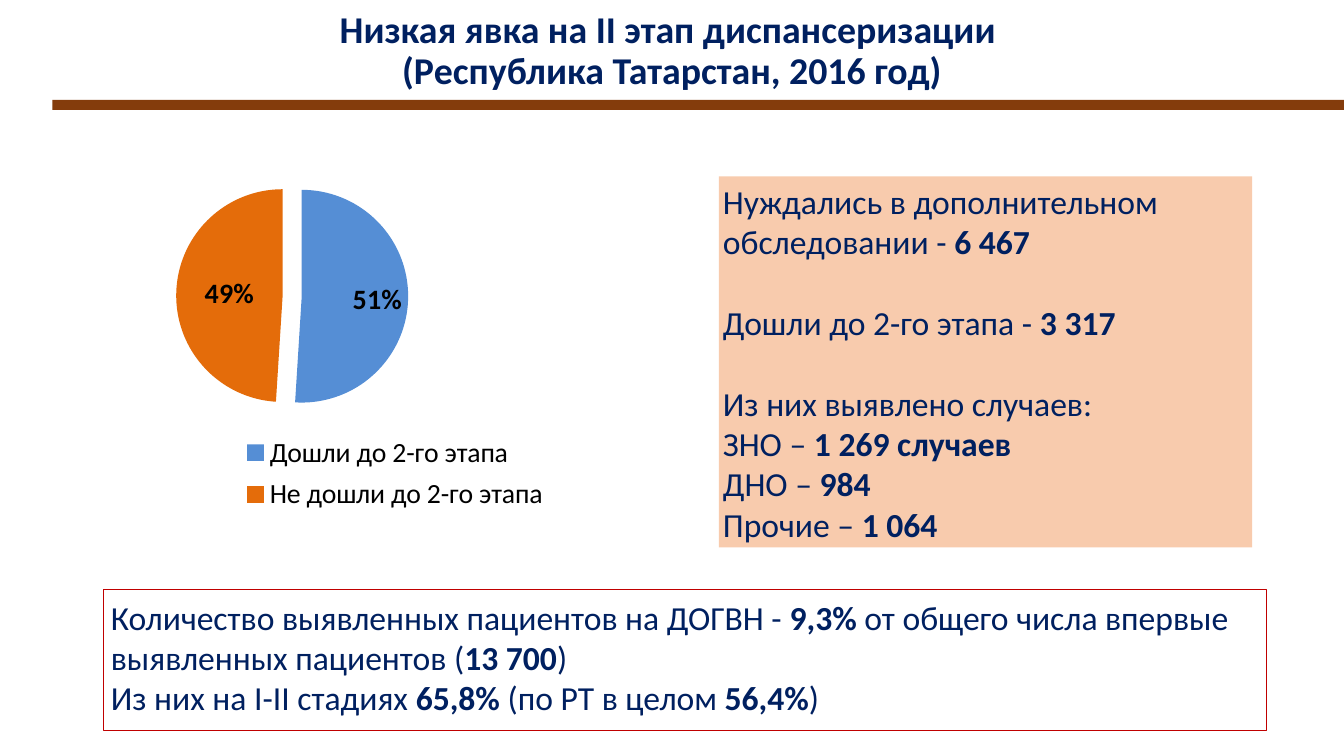
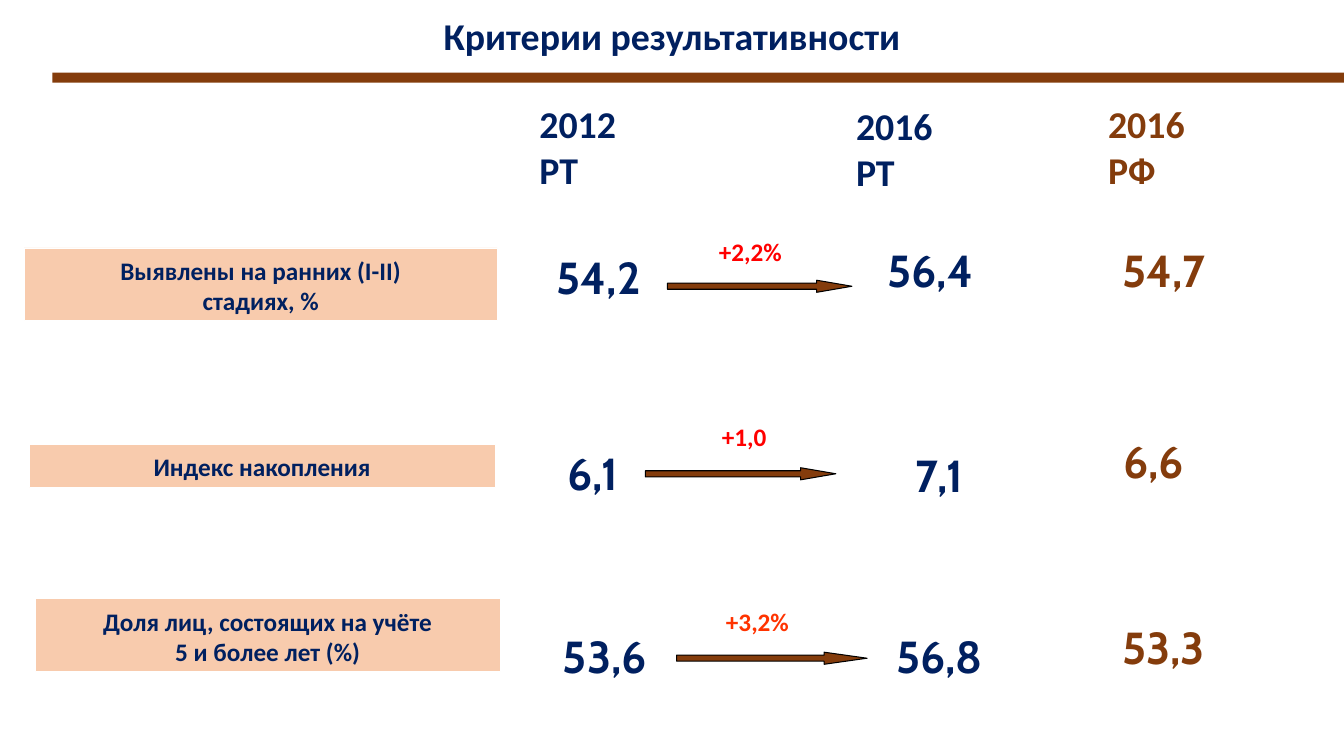
from lxml import etree
from pptx import Presentation
from pptx.chart.data import CategoryChartData
from pptx.dml.color import RGBColor
from pptx.enum.chart import XL_CHART_TYPE as ChartType
from pptx.enum.chart import XL_LABEL_POSITION as LabelPos
from pptx.enum.chart import XL_LEGEND_POSITION as LegendPos
from pptx.enum.shapes import MSO_SHAPE as Shape
from pptx.enum.text import MSO_ANCHOR as Anchor
from pptx.enum.text import PP_ALIGN as Align
from pptx.oxml.ns import qn
from pptx.util import Inches, Pt

COLORS = {
    "navy": "002060", "brown": "843C0C", "peach": "F8CBAD", "crimson": "C00000",
    "red": "FF0000", "scarlet": "FF3300", "blue": "558ED5", "orange": "E46C0A",
    "white": "FFFFFF", "black": "000000",
}
BODY, FIGURES = "Calibri", "Cabin"
TITLE_SIZE, INSET = 27, 0.07
BAND_LEFT, BAND_HEIGHT = 0.52, 0.1

# Slide 1 content: each paragraph is (space before, [(text, bold), ...])
TURNOUT_TITLE = ["Низкая явка на II этап диспансеризации ", "(Республика Татарстан, 2016 год)"]
TURNOUT = [("Дошли до 2-го этапа", 51, "blue"), ("Не дошли до 2-го этапа", 49, "orange")]
GAP = 29
EXAMINED = [
    (0, [("Нуждались в дополнительном обследовании - ", False), ("6 467", True)]),
    (GAP, [("Дошли до 2-го этапа - ", False), ("3 317", True)]),
    (GAP, [("Из них выявлено случаев:", False)]),
    (0, [("ЗНО – ", False), ("1 269 случаев", True)]),
    (0, [("ДНО – ", False), ("984", True)]),
    (0, [("Прочие – ", False), ("1 064", True)]),
]
DETECTED = [
    (0, [("Количество выявленных пациентов на ДОГВН - ", False), ("9,3% ", True),
         ("от общего числа впервые выявленных пациентов (", False),
         ("13 700", True), (")", False)]),
    (0, [("Из них на I-II стадиях ", False), ("65,8%", True),
         (" (по РТ в целом ", False), ("56,4%", True), (")", False)]),
]

# Slide 2 content
CRITERIA_TITLE = "Критерии результативности"
HEADINGS = [  # year, region, colour, left, top
    ("2012", "РТ", "navy", 5.28, 0.93),
    ("2016", "РТ", "navy", 8.42, 0.95),
    ("2016", "РФ", "brown", 10.92, 0.93),
]
CRITERIA = [
    {"label": ["Выявлены на ранних (I-II)", "стадиях, %"], "label_at": (0.24, 2.46, 4.69, 0.72),
     "figures": [("54,2", 5.94, 2.41), ("56,4", 9.23, 2.34), ("54,7", 11.06, 2.34)],
     "change": ("+2,2%", "red", 7.06, 2.27), "arrow": (6.62, 2.78, 1.83, 2.91)},
    {"label": ["Индекс накопления"], "label_at": (0.29, 4.41, 4.62, 0.43),
     "figures": [("6,1", 5.88, 4.35), ("7,1", 9.32, 4.37), ("6,6", 11.07, 4.23)],
     "change": ("+1,0", "red", 7.09, 4.11), "arrow": (6.4, 4.64, 1.89, 2.91)},
    {"label": ["Доля лиц, состоящих на учёте", "5 и более лет (%)"],
     "label_at": (0.35, 5.94, 4.61, 0.72),
     "figures": [("53,6", 6, 6.17), ("56,8", 9.32, 6.17), ("53,3", 11.06, 6.08)],
     "change": ("+3,2%", "scarlet", 7.13, 5.94), "arrow": (6.71, 6.47, 1.89, 3.55)},
]
FIGURE_WIDTH, FIGURE_HEIGHT = 1.14, 0.67


def rgb(name):
    return RGBColor.from_string(COLORS[name])


def style(font, size, color, bold=False, face=BODY):
    font.name, font.size, font.bold = face, Pt(size), bold
    font.color.rgb = rgb(color)


def inches(box):
    return [Inches(length) for length in box]


def add_block(slide, box, fill=None, line=None, width=0.75, kind=Shape.RECTANGLE):
    block = slide.shapes.add_shape(kind, *inches(box))
    block.shadow.inherit = False
    if fill:
        block.fill.solid()
        block.fill.fore_color.rgb = rgb(fill)
    else:
        block.fill.background()
    if line:
        block.line.color.rgb = rgb(line)
        block.line.width = Pt(width)
    else:
        block.line.fill.background()
    return block


def write(holder, paragraphs, size, color, face=BODY, align=Align.LEFT,
          inset=INSET, anchor=Anchor.TOP):
    frame = holder.text_frame
    frame.word_wrap = True
    frame.vertical_anchor = anchor
    frame.margin_left = frame.margin_right = Inches(inset)
    frame.margin_top = frame.margin_bottom = Inches(inset)
    for i, (before, runs) in enumerate(paragraphs):
        paragraph = frame.add_paragraph() if i else frame.paragraphs[0]
        paragraph.alignment = align
        if before:
            paragraph.space_before = Pt(before)
        for text, bold in runs:
            run = paragraph.add_run()
            run.text = text
            style(run.font, size, color, bold, face)


def write_bold(slide, box, lines, size, color, **options):
    holder = slide.shapes.add_textbox(*inches(box))
    write(holder, bold_lines(lines), size, color, **options)
    return holder


def bold_lines(lines):
    return [(0, [(line, True)]) for line in lines]


def add_title(slide, box, lines, band_top, **options):
    title = write_bold(slide, box, lines, TITLE_SIZE, "navy", align=Align.CENTER,
                       anchor=Anchor.MIDDLE, **options)
    add_block(slide, (BAND_LEFT, band_top, 13.33 - BAND_LEFT, BAND_HEIGHT), "brown")
    return title


def set_layout(parent, index, x, y, w, h, inner=False):
    for old in parent.findall(qn("c:layout")):
        parent.remove(old)
    layout = etree.Element(qn("c:layout"))
    manual = etree.SubElement(layout, qn("c:manualLayout"))
    settings = [("layoutTarget", "inner")] if inner else []
    settings += [("xMode", "edge"), ("yMode", "edge"), ("x", x), ("y", y), ("w", w), ("h", h)]
    for tag, value in settings:
        etree.SubElement(manual, qn("c:" + tag)).set("val", str(value))
    parent.insert(index, layout)


def add_turnout_pie(slide):
    data = CategoryChartData()
    data.categories = [name for name, _, _ in TURNOUT]
    data.add_series("Явка", [share for _, share, _ in TURNOUT])
    chart = slide.shapes.add_chart(ChartType.PIE, *inches((0.43, 1.55, 5.05, 3.64)), data).chart
    chart.has_title = False
    style(chart.font, 10, "black")
    plot = chart.plots[0]
    plot.vary_by_categories = True
    plot_area = plot._element.getparent()
    set_layout(plot_area, 0, 0.03, 0.09, 0.88, 0.58, inner=True)

    # Slices and the pulled-out first one
    series = plot.series[0]
    for i, (_, _, color) in enumerate(TURNOUT):
        slice_fill = series.points[i].format.fill
        slice_fill.solid()
        slice_fill.fore_color.rgb = rgb(color)
    first = series._element.find(qn("c:dPt"))
    explosion = etree.Element(qn("c:explosion"))
    explosion.set("val", "18")
    first.find(qn("c:spPr")).addprevious(explosion)

    # Percent labels
    labels = series.data_labels
    labels.show_percentage, labels.show_value = True, False
    labels.number_format, labels.number_format_is_linked = "0%", False
    labels.position = LabelPos.INSIDE_END
    style(labels.font, 20, "black", True)
    second = series.points[1].data_label
    style(second.font, 20, "black", True)
    second.position = LabelPos.CENTER
    for tag, shown in (("showVal", "0"), ("showCatName", "0"), ("showSerName", "0"),
                       ("showLegendKey", "0"), ("showPercent", "1")):
        for flag in second._dLbl.findall(qn("c:" + tag)):
            flag.set("val", shown)

    # Legend
    chart.has_legend = True
    legend = chart.legend
    legend.position = LegendPos.BOTTOM
    legend.include_in_layout = True
    style(legend.font, 19.8, "black")
    set_layout(legend._element, 1, 0.38, 0.74, 0.62, 0.25)


def build_turnout(slide):
    title = add_title(slide, (0, 0.03, 13.33, 0.96), TURNOUT_TITLE[:1], 0.99, inset=0.05)
    heading = title.text_frame.paragraphs[0]
    heading.line_spacing = 0.9
    heading.add_line_break()
    run = heading.add_run()
    run.text = TURNOUT_TITLE[1]
    style(run.font, TITLE_SIZE, "navy", True)
    add_turnout_pie(slide)
    examined = add_block(slide, (7.13, 1.75, 5.29, 3.68), "peach")
    write(examined, EXAMINED, 24, "navy", inset=0.04)
    detected = add_block(slide, (1.03, 5.85, 11.53, 1.4), line="crimson")
    write(detected, DETECTED, 24, "navy")


def build_criteria(slide):
    add_title(slide, (0, 0.07, 13.33, 0.56), [CRITERIA_TITLE], 0.72)
    for year, region, color, left, top in HEADINGS:
        write_bold(slide, (left, top, 1.25, 0.99), [year, region], TITLE_SIZE, color)
    for row in CRITERIA:
        label = add_block(slide, row["label_at"], "peach", "white", 0.5)
        write(label, bold_lines(row["label"]), 18, "navy", align=Align.CENTER)
        # Republic figures are centred on x, the federal one starts at x
        for i, (figure, x, top) in enumerate(row["figures"]):
            federal = i == 2
            left = x if federal else x - FIGURE_WIDTH / 2
            write_bold(slide, (left, top, FIGURE_WIDTH, FIGURE_HEIGHT), [figure], 32,
                       "brown" if federal else "navy", face=FIGURES,
                       align=Align.LEFT if federal else Align.CENTER)
        change, color, left, top = row["change"]
        write_bold(slide, (left, top, 0.85, 0.42), [change], 18, color)
        left, top, length, head = row["arrow"]
        arrow = add_block(slide, (left, top, length, 0.12), "brown", "black",
                          kind=Shape.RIGHT_ARROW)
        arrow.adjustments[0], arrow.adjustments[1] = 0.5, head


def main():
    deck = Presentation()
    deck.slide_width, deck.slide_height = Inches(13.33), Inches(7.5)
    for build in (build_turnout, build_criteria):
        build(deck.slides.add_slide(deck.slide_layouts[6]))
    deck.save("out.pptx")


if __name__ == "__main__":
    main()
